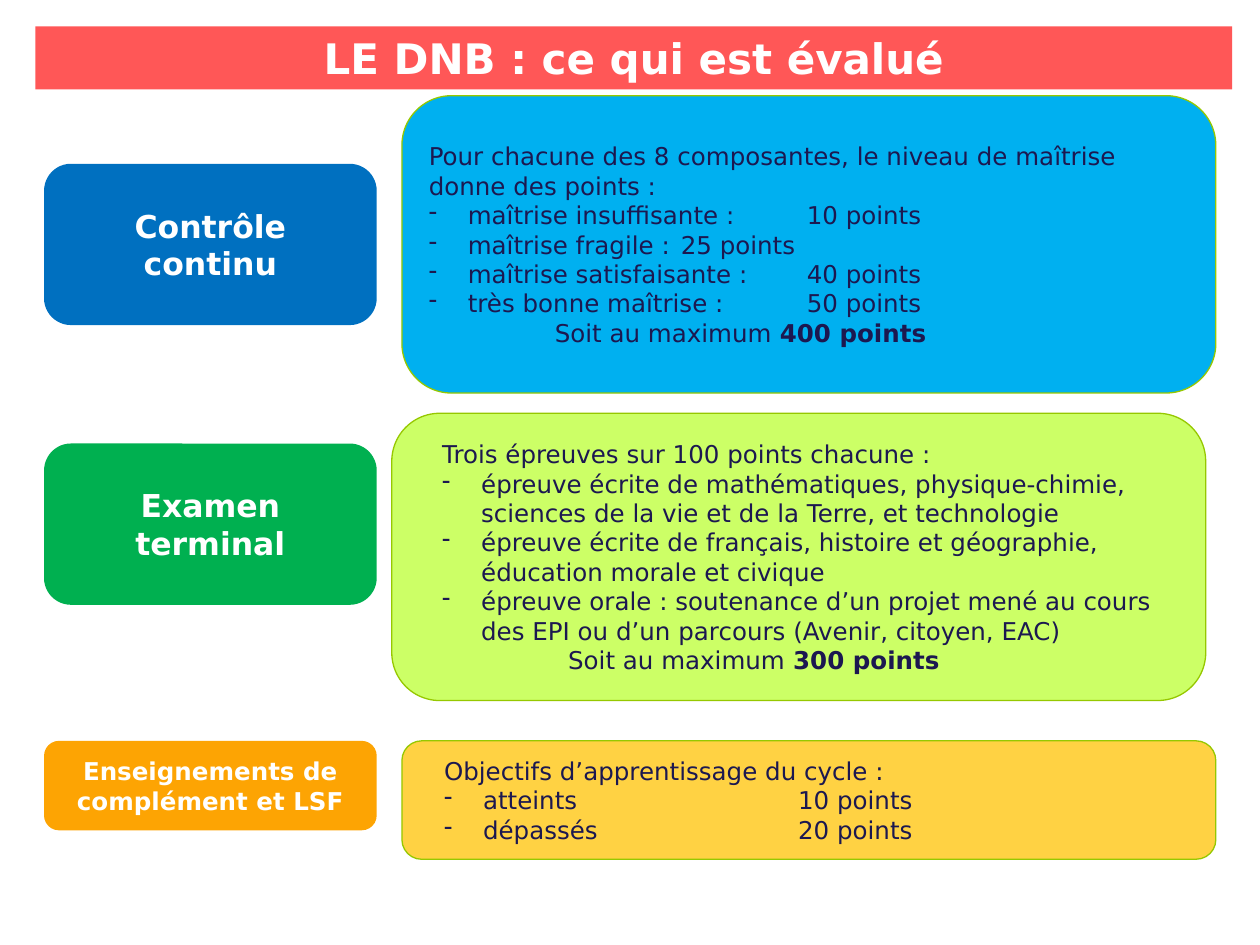
from pptx import Presentation
from pptx.dml.color import RGBColor
from pptx.enum.shapes import MSO_SHAPE
from pptx.enum.text import MSO_ANCHOR, MSO_AUTO_SIZE, PP_ALIGN
from pptx.oxml.ns import qn
from pptx.util import Inches, Pt

FONT = "DejaVu Sans"
WHITE = RGBColor(0xFF, 0xFF, 0xFF)
NAVY = RGBColor(0x1C, 0x18, 0x50)
RED = RGBColor(0xFF, 0x57, 0x57)
OUTLINE = RGBColor(0x96, 0xC8, 0x00)
BLUE = RGBColor(0x00, 0x70, 0xC0)
SKY = RGBColor(0x00, 0xB0, 0xF0)
GREEN = RGBColor(0x00, 0xB0, 0x50)
LIME = RGBColor(0xCC, 0xFF, 0x66)
ORANGE = RGBColor(0xFD, 0xA4, 0x03)
YELLOW = RGBColor(0xFF, 0xD2, 0x43)


def write(para, text, size=14, color=NAVY, bold=False, align=PP_ALIGN.LEFT,
          margin=0, bullet=False, ending=""):
    """Fill a paragraph; ending is a bold closing run, bullet adds a hanging dash."""
    properties = para._p.get_or_add_pPr()
    properties.set("marL", str(Inches(margin)))
    properties.set("indent", str(Inches(-0.31 if bullet else 0)))
    properties.set("defTabSz", str(Inches(1)))
    if bullet:
        dash = properties.makeelement(qn("a:buChar"), {"char": "-"})
        properties.append(dash)
    para.alignment = align
    for words, strong in ((text, bold), (ending, True)):
        if words:
            span = para.add_run()
            span.text = words
            span.font.name = FONT
            span.font.size = Pt(size)
            span.font.bold = strong
            span.font.color.rgb = color


def add_panel(left, top, width, height, fill, outline=None):
    panel = slide.shapes.add_shape(
        MSO_SHAPE.ROUNDED_RECTANGLE,
        Inches(left), Inches(top), Inches(width), Inches(height))
    panel.shadow.inherit = False
    panel.fill.solid()
    panel.fill.fore_color.rgb = fill
    if outline:
        panel.line.color.rgb = outline
        panel.line.width = Pt(0.75)
    else:
        panel.line.fill.background()
    panel.text_frame.word_wrap = True
    panel.text_frame.vertical_anchor = MSO_ANCHOR.MIDDLE
    return panel.text_frame


deck = Presentation()
deck.slide_width, deck.slide_height = Inches(10), Inches(7.5)
slide = deck.slides.add_slide(deck.slide_layouts[5])

title = slide.shapes.title
title.left, title.top = Inches(0.28), Inches(0.21)
title.width, title.height = Inches(9.5), Inches(0.5)
title.fill.solid()
title.fill.fore_color.rgb = RED
title.text_frame.auto_size = MSO_AUTO_SIZE.NONE
title.text_frame.vertical_anchor = MSO_ANCHOR.TOP
write(title.text_frame.paragraphs[0], "LE DNB : ce qui est évalué",
      size=24, color=WHITE, bold=True, align=PP_ALIGN.CENTER)

labels = [
    ("Contrôle continu", 1.3, 1.28, BLUE, 18),
    ("Examen terminal", 3.52, 1.28, GREEN, 18),
    ("Enseignements de complément et LSF", 5.88, 0.71, ORANGE, 14),
]
for text, top, height, fill, size in labels:
    frame = add_panel(0.35, top, 2.64, height, fill)
    write(frame.paragraphs[0], text, size=size, color=WHITE, bold=True,
          align=PP_ALIGN.CENTER)

# left, top, height, fill, margin, heading, bullets, maximum
details = [
    (3.19, 0.76, 2.36, SKY, 0,
     "Pour chacune des 8 composantes, le niveau de maîtrise donne des points :",
     ["maîtrise insuffisante : \t10 points",
      "maîtrise fragile : \t25 points",
      "maîtrise satisfaisante : \t40 points",
      "très bonne maîtrise : \t50 points"],
     "400 points"),
    (3.11, 3.28, 2.28, LIME, 0.19,
     "Trois épreuves sur 100 points chacune :",
     ["épreuve écrite de mathématiques, physique-chimie, sciences de la vie "
      "et de la Terre, et technologie",
      "épreuve écrite de français, histoire et géographie, éducation morale "
      "et civique",
      "épreuve orale : soutenance d’un projet mené au cours des EPI ou d’un "
      "parcours (Avenir, citoyen, EAC)"],
     "300 points"),
    (3.19, 5.88, 0.94, YELLOW, 0.19,
     "Objectifs d’apprentissage du cycle :",
     ["atteints\t\t10 points", "dépassés\t\t20 points"],
     None),
]
for left, top, height, fill, margin, heading, bullets, maximum in details:
    frame = add_panel(left, top, 6.46, height, fill, outline=OUTLINE)
    write(frame.paragraphs[0], heading, margin=margin)
    for text in bullets:
        write(frame.add_paragraph(), text, margin=margin + 0.31, bullet=True)
    if maximum:
        write(frame.add_paragraph(), "\tSoit au maximum ", margin=margin,
              ending=maximum)

deck.save("out.pptx")
